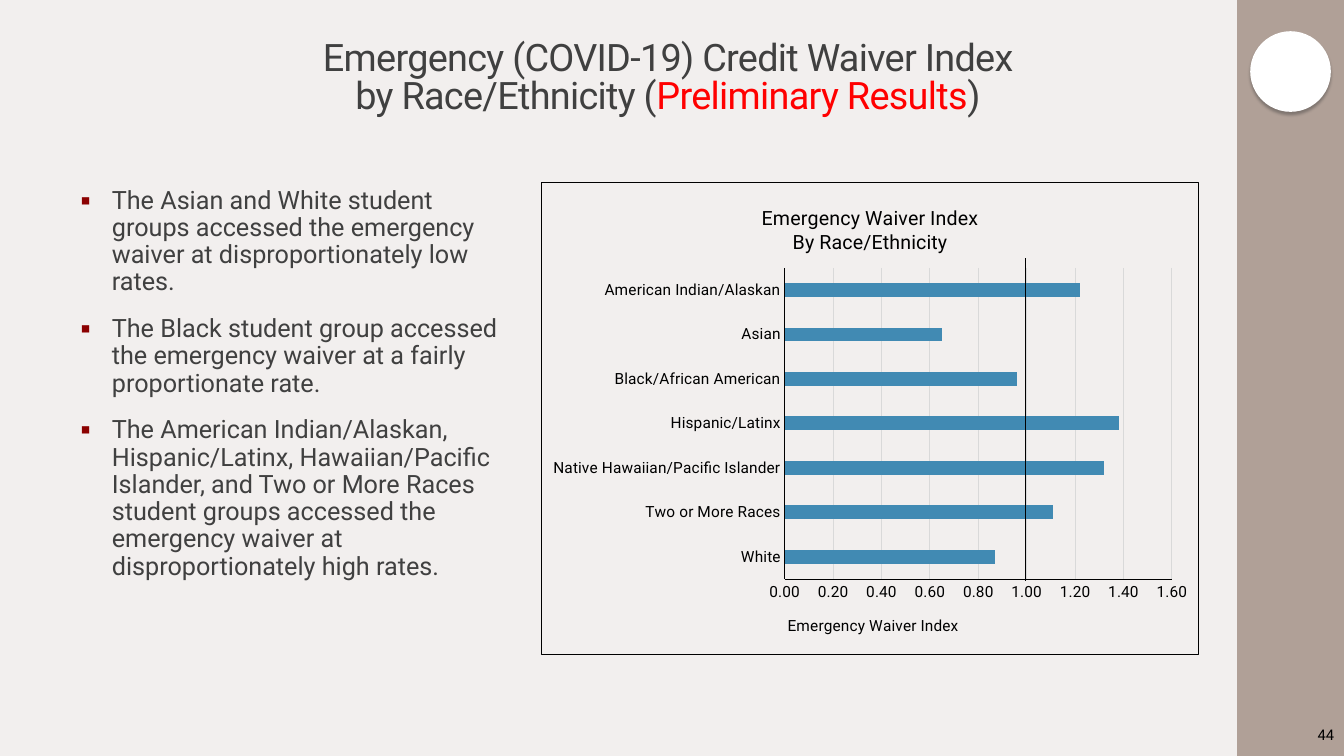
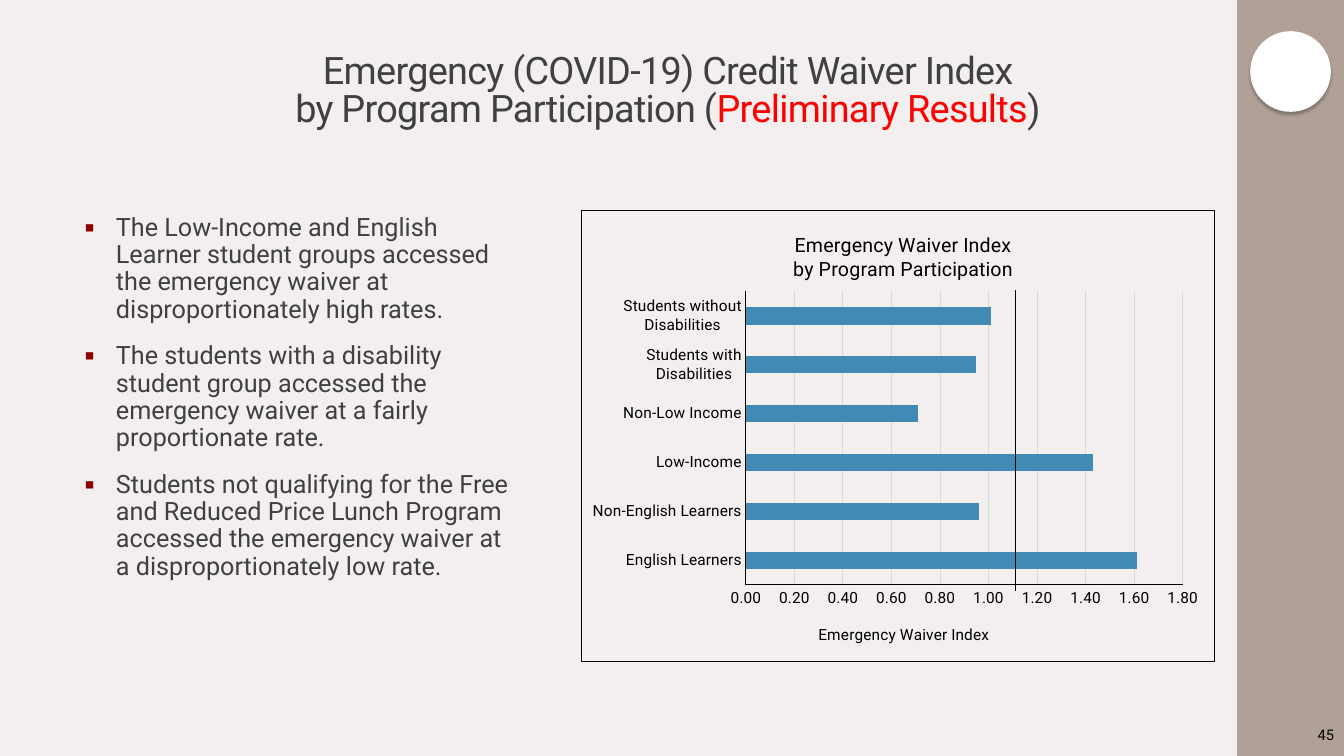
from lxml.etree import SubElement
from pptx import Presentation
from pptx.chart.data import CategoryChartData
from pptx.dml.color import RGBColor
from pptx.enum.chart import XL_CHART_TYPE, XL_TICK_MARK
from pptx.enum.shapes import MSO_CONNECTOR, MSO_SHAPE
from pptx.enum.text import MSO_ANCHOR, MSO_AUTO_SIZE, PP_ALIGN
from pptx.oxml import parse_xml
from pptx.oxml.ns import nsdecls, qn
from pptx.util import Inches, Pt

HUES = {
    "back": "F2EFEE", "band": "B0A097", "white": "FFFFFF", "shade": "373737",
    "text": "404040", "alert": "FF0000", "mark": "8B0000",
    "ink": "000000", "grid": "D9D9D9", "bar": "418AB3",
}
FACE = "Roboto"
WIDE, HIGH = 13.33, 7.5
BAND = 1.06


def hue(name):
    return RGBColor.from_string(HUES[name])


def box(*sides):
    return [Inches(side) for side in sides]


def style(font, size, name):
    font.name, font.size, font.bold = FACE, Pt(size), False
    font.color.rgb = hue(name)


def stroke(line, name, width=0.75):
    line.color.rgb = hue(name)
    line.width = Pt(width)


def add_run(par, text, size, name):
    run = par.add_run()
    run.text = text
    style(run.font, size, name)
    return run


def pin(part, index, target, **spot):
    """Give a chart part a manual layout, in fractions of the chart."""
    for old in part.findall(qn("c:layout")):
        part.remove(old)
    modes = {"xMode": "edge", "yMode": "edge"}
    if target:
        modes = {"layoutTarget": target, **modes}
    inner = "".join(f'<c:{key} val="{val}"/>'
                    for key, val in {**modes, **spot}.items())
    part.insert(index, parse_xml(
        f'<c:layout {nsdecls("c")}><c:manualLayout>{inner}'
        '</c:manualLayout></c:layout>'))


class Deck:
    def __init__(self):
        self.prs = Presentation()
        self.prs.slide_width, self.prs.slide_height = box(WIDE, HIGH)
        fill = self.prs.slide_master.background.fill
        fill.solid()
        fill.fore_color.rgb = hue("back")
        self.slide = None

    def start(self, number):
        """Add a slide with its side band, badge and number."""
        self.slide = self.prs.slides.add_slide(self.prs.slide_layouts[5])
        left = WIDE - BAND
        self.shape(MSO_SHAPE.RECTANGLE, "band", left, 0, BAND, HIGH)
        badge = self.shape(MSO_SHAPE.OVAL, "white", 12.4, 0.31, 0.8, 0.8)
        glow = SubElement(
            badge.element.spPr.find(qn("a:effectLst")), qn("a:outerShdw"),
            blurRad=str(Pt(2)), dist=str(Pt(2)), dir="5400000", rotWithShape="0")
        tint = SubElement(glow, qn("a:srgbClr"), val=HUES["shade"])
        SubElement(tint, qn("a:alpha"), val="40000")
        frame = self.frame(left, 7.09, BAND, 0.4)
        frame.vertical_anchor = MSO_ANCHOR.MIDDLE
        par = frame.paragraphs[0]
        par.alignment = PP_ALIGN.RIGHT
        add_run(par, str(number), 10.5, "ink")

    def shape(self, kind, name, *area):
        shape = self.slide.shapes.add_shape(kind, *box(*area))
        shape.shadow.inherit = False
        shape.fill.solid()
        shape.fill.fore_color.rgb = hue(name)
        shape.line.fill.background()
        return shape

    def frame(self, *area):
        frame = self.slide.shapes.add_textbox(*box(*area)).text_frame
        frame.word_wrap = True
        return frame

    def title(self, topic, height):
        title = self.slide.shapes.title
        title.left, title.top, title.width, title.height = box(
            1.2, 0.31, 10.85, height)
        frame = title.text_frame
        frame.auto_size = MSO_AUTO_SIZE.NONE
        frame.vertical_anchor = MSO_ANCHOR.MIDDLE
        par = frame.paragraphs[0]
        par.alignment, par.line_spacing = PP_ALIGN.CENTER, 0.85
        runs = [("Emergency (COVID-19) Credit Waiver Index", "text"),
                (f"by {topic} (", "text"),
                ("Preliminary Results", "alert"), (")", "text")]
        for index, (text, name) in enumerate(runs):
            if index == 1:
                par.add_line_break()
            run = add_run(par, text, 27, name)
            run.font._element.set("spc", "-50")

    def points(self, items, *area):
        frame = self.frame(*area)
        frame.margin_left = frame.margin_right = 0
        for index, item in enumerate(items):
            par = frame.add_paragraph() if index else frame.paragraphs[0]
            par.line_spacing = 0.9
            par.space_before, par.space_after = Pt(12 if index else 0), Pt(2)
            props = par._p.get_or_add_pPr()
            props.set("marL", str(Inches(0.31)))
            props.set("indent", str(-Inches(0.31)))
            tint = SubElement(props, qn("a:buClr"))
            SubElement(tint, qn("a:srgbClr"), val=HUES["mark"])
            SubElement(props, qn("a:buFont"), typeface=FACE)
            SubElement(props, qn("a:buChar"), char="▪")
            add_run(par, item, 18, "text")

    def label(self, title, lines, size, x, y):
        """Fill and place the title of a chart or an axis."""
        frame = title.text_frame
        for index, text in enumerate(lines):
            par = frame.add_paragraph() if index else frame.paragraphs[0]
            add_run(par, text, size, "ink")
        body = title.element.find(".//" + qn("a:bodyPr"))
        body.set("rot", "0")
        body.set("vert", "horz")
        pin(title.element, 1, None, x=x, y=y)

    def chart(self, topic, rows, top, gap, plot, *area):
        data = CategoryChartData(number_format="0.00")
        data.categories = [name for name, _ in rows]
        data.add_series("Series 1", [value for _, value in rows])
        chart = self.slide.shapes.add_chart(
            XL_CHART_TYPE.BAR_CLUSTERED, *box(*area), data).chart
        style(chart.font, 10, "ink")
        chart.has_legend = False
        chart.has_title = True
        self.label(chart.chart_title, ["Emergency Waiver Index", topic],
                   14, 0.33, 0.04)

        bars = chart.plots[0]
        bars.gap_width, bars.vary_by_categories = gap, False
        fill = bars.series[0].format.fill
        fill.solid()
        fill.fore_color.rgb = hue("bar")

        cats, vals = chart.category_axis, chart.value_axis
        for axis in (cats, vals):
            axis.major_tick_mark = axis.minor_tick_mark = XL_TICK_MARK.NONE
            style(axis.tick_labels.font, 11, "ink")
            stroke(axis.format.line, "ink")
        cats.has_major_gridlines = False
        vals.has_major_gridlines = True
        stroke(vals.major_gridlines.format.line, "grid")
        vals.minimum_scale, vals.maximum_scale, vals.major_unit = 0, top, 0.2
        vals.tick_labels.number_format = "0.00"
        vals.tick_labels.number_format_is_linked = False
        self.label(vals.axis_title, ["Emergency Waiver Index"],
                   11, 0.37, 0.91)

        pin(chart.element.find(".//" + qn("c:plotArea")), 0, "inner",
            **dict(zip("xywh", plot)))
        chart.element.find(qn("c:chart")).addnext(parse_xml(
            f'<c:spPr {nsdecls("c", "a")}><a:noFill/>'
            f'<a:ln w="{Pt(0.75)}"><a:solidFill>'
            f'<a:srgbClr val="{HUES["ink"]}"/></a:solidFill></a:ln></c:spPr>'))

    def rule(self, x, top, bottom):
        line = self.slide.shapes.add_connector(
            MSO_CONNECTOR.STRAIGHT, *box(x, top, x, bottom))
        stroke(line.line, "ink", 1)
        SubElement(line.element.spPr, qn("a:effectLst"))


def main():
    deck = Deck()

    deck.start(44)
    deck.title("Race/Ethnicity", 0.95)
    deck.points([
        "The Asian and White student groups accessed the emergency waiver "
        "at disproportionately low rates.",
        "The Black student group accessed the emergency waiver at a fairly "
        "proportionate rate.",
        "The American Indian/Alaskan, Hispanic/Latinx, Hawaiian/Pacific "
        "Islander, and Two or More Races student groups accessed the "
        "emergency waiver at disproportionately high rates.",
    ], 0.8, 1.81, 4.26, 4.69)
    deck.chart("By Race/Ethnicity", [
        ("White", 0.87), ("Two or More Races", 1.11),
        ("Native Hawaiian/Pacific Islander", 1.32),
        ("Hispanic/Latinx", 1.38), ("Black/African American", 0.96),
        ("Asian", 0.65), ("American Indian/Alaskan", 1.22),
    ], 1.6, 219, (0.37, 0.18, 0.59, 0.66), 5.37, 1.81, 6.52, 4.69)
    deck.rule(10.17, 2.56, 5.76)

    deck.start(45)
    deck.title("Program Participation", 1.2)
    deck.points([
        "The Low-Income and English Learner student groups accessed the "
        "emergency waiver at disproportionately high rates.",
        "The students with a disability student group accessed the "
        "emergency waiver at a fairly proportionate rate.",
        "Students not qualifying for the Free and Reduced Price Lunch "
        "Program accessed the emergency waiver at a disproportionately "
        "low rate.",
    ], 0.84, 2.08, 4.21, 4.49)
    deck.chart("by Program Participation", [
        ("English Learners", 1.61), ("Non-English Learners", 0.96),
        ("Low-Income", 1.43), ("Non-Low Income", 0.71),
        ("Students with Disabilities", 0.95),
        ("Students without Disabilities", 1.01),
    ], 1.8, 182, (0.26, 0.18, 0.69, 0.65), 5.76, 2.08, 6.29, 4.49)
    deck.rule(10.07, 2.88, 5.86)

    deck.prs.save("out.pptx")


if __name__ == "__main__":
    main()
